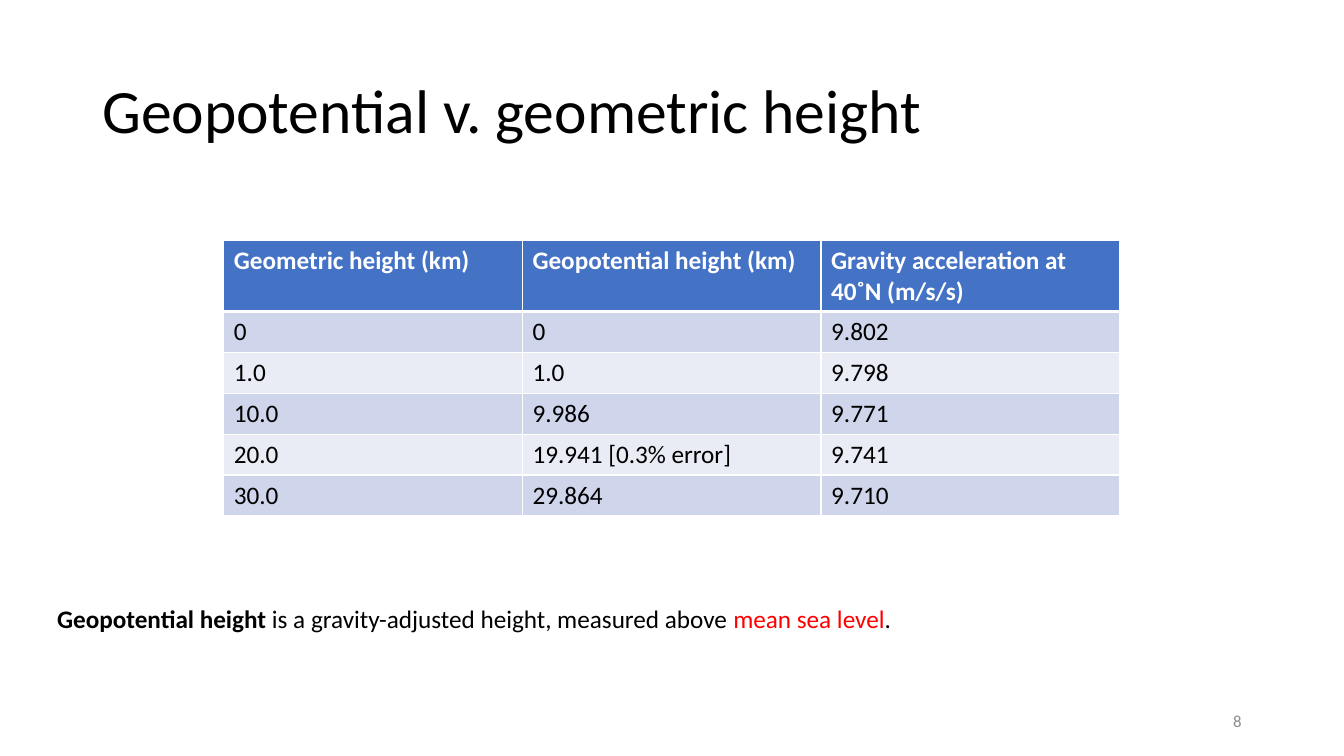
from lxml import etree
from pptx import Presentation
from pptx import util as u
from pptx.dml import color
from pptx.enum import text
from pptx.oxml import ns

FONT = "Calibri"
COLORS = {
    "black": "000000",
    "white": "FFFFFF",
    "red": "FF0000",
    "grey": "8C8C8C",
    "header": "4472C4",
    "odd_row": "CFD5EA",
    "even_row": "E9EBF5",
}
HEIGHTS = [
    ("Geometric height (km)", "Geopotential height (km)", "Gravity acceleration at 40˚N (m/s/s)"),
    ("0", "0", "9.802"),
    ("1.0", "1.0", "9.798"),
    ("10.0", "9.986", "9.771"),
    ("20.0", "19.941 [0.3% error]", "9.741"),
    ("30.0", "29.864", "9.710"),
]


def rgb(name):
    return color.RGBColor.from_string(COLORS[name])


def add_run(paragraph, content, size, color_name="black", bold=False):
    run = paragraph.add_run()
    run.text = content
    run.font.name = FONT
    run.font.size = u.Pt(size)
    run.font.bold = bold
    run.font.color.rgb = rgb(color_name)


def add_text(slide, left, top, width, height, anchor=text.MSO_ANCHOR.MIDDLE, wrap=True):
    shape = slide.shapes.add_textbox(u.Cm(left), u.Cm(top), u.Cm(width), u.Cm(height))
    shape.text_frame.word_wrap = wrap
    shape.text_frame.vertical_anchor = anchor
    return shape.text_frame


def add_border(cell, side, width):
    properties = cell._tc.get_or_add_tcPr()
    line = etree.SubElement(properties, ns.qn(f"a:ln{side}"), w=str(u.Pt(width)))
    fill = etree.SubElement(line, ns.qn("a:solidFill"))
    etree.SubElement(fill, ns.qn("a:srgbClr"), val=COLORS["white"])


def style_cell(cell, content, row):
    is_header = row == 0
    widths = {"L": 1, "R": 1, "T": 3 if row == 1 else 1, "B": 3 if is_header else 1}
    for side, width in widths.items():
        add_border(cell, side, width)
    cell.fill.solid()
    cell.fill.fore_color.rgb = rgb("header" if is_header else "odd_row" if row % 2 else "even_row")
    paragraph = cell.text_frame.paragraphs[0]
    add_run(paragraph, content, 18, "white" if is_header else "black", is_header)


def add_height_table(slide):
    frame = slide.shapes.add_table(
        len(HEIGHTS), len(HEIGHTS[0]), u.Cm(5.64), u.Cm(6.07), u.Cm(22.58), u.Cm(6.93)
    )
    table = frame.table
    for row, values in enumerate(HEIGHTS):
        table.rows[row].height = u.Cm(1.03 if row else 1.78)
        for column, content in enumerate(values):
            style_cell(table.cell(row, column), content, row)


def main():
    presentation = Presentation()
    presentation.slide_width = u.Cm(33.87)
    presentation.slide_height = u.Cm(19.05)
    slide = presentation.slides.add_slide(presentation.slide_layouts[6])

    title = add_text(slide, 2.33, 1.01, 29.21, 3.68).paragraphs[0]
    title.line_spacing = 0.9
    add_run(title, "Geopotential v. geometric height", 44)

    number = add_text(slide, 23.92, 17.66, 7.62, 1.01).paragraphs[0]
    number.alignment = text.PP_ALIGN.RIGHT
    add_run(number, "8", 12, "grey")

    add_height_table(slide)

    frame = add_text(slide, 1.19, 15.08, 21.67, 1.03, text.MSO_ANCHOR.TOP, wrap=False)
    frame.auto_size = text.MSO_AUTO_SIZE.SHAPE_TO_FIT_TEXT
    definition = frame.paragraphs[0]
    add_run(definition, "Geopotential height ", 18, bold=True)
    add_run(definition, "is a gravity-adjusted height, measured above ", 18)
    add_run(definition, "mean sea level", 18, "red")
    add_run(definition, ".", 18)

    presentation.save("out.pptx")


if __name__ == "__main__":
    main()
